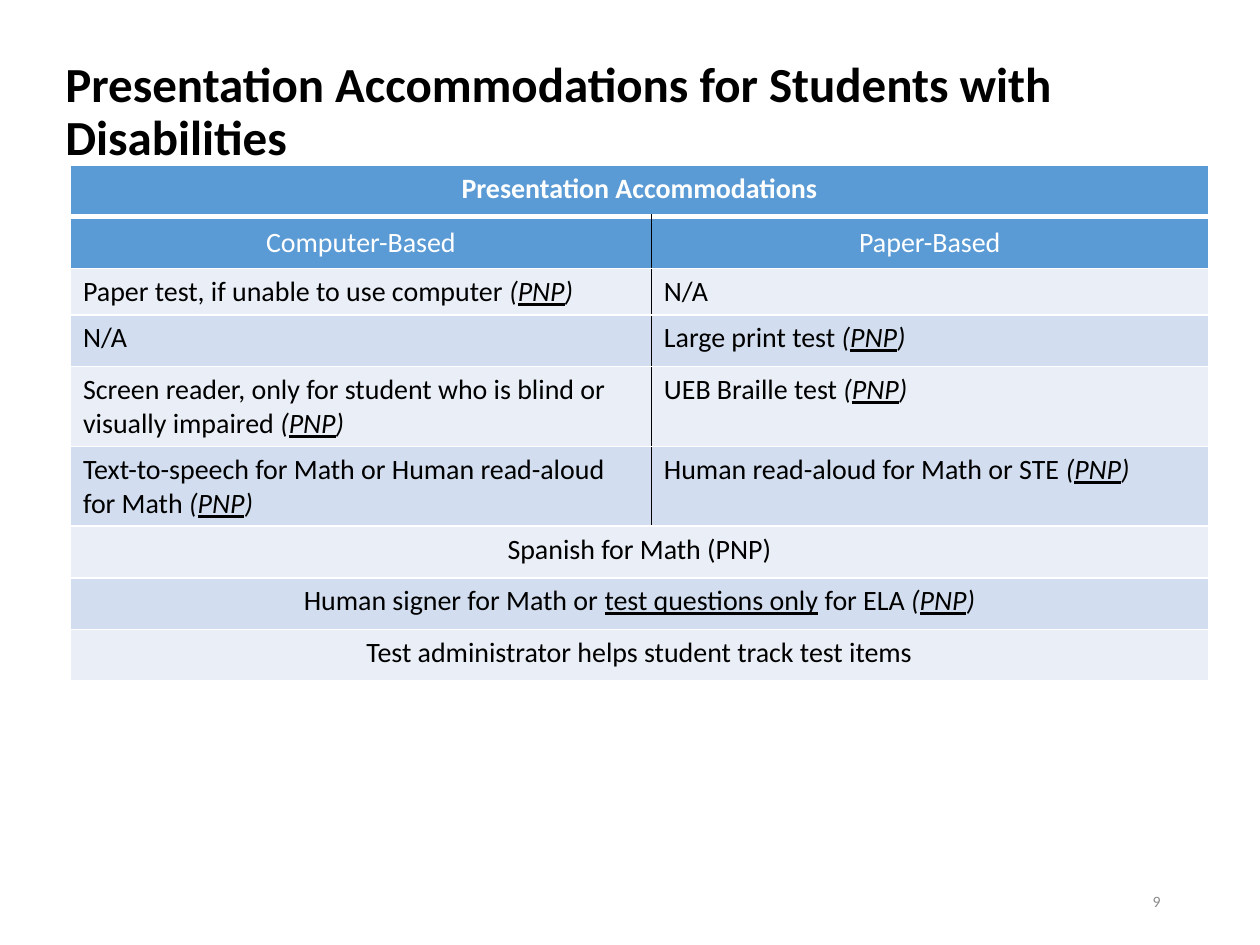
"""Build the slide on presentation accommodations for students with disabilities."""
from lxml import etree
from pptx import Presentation
from pptx.dml.color import RGBColor
from pptx.enum.text import MSO_ANCHOR, PP_ALIGN
from pptx.oxml.ns import qn
from pptx.util import Inches, Pt

LEFT, CENTER, RIGHT = PP_ALIGN.LEFT, PP_ALIGN.CENTER, PP_ALIGN.RIGHT
TOP, MIDDLE = MSO_ANCHOR.TOP, MSO_ANCHOR.MIDDLE

BLACK, WHITE, GRAY = "000000", "FFFFFF", "8C8C8C"
HEADER_FILL, BAND_FILLS = "5B9BD5", ("EAEFF7", "D2DEEF")

PLAIN, ITALIC, UNDERLINE = {}, {"italic": True}, {"underline": True}
PROFILE = [("(", ITALIC), ("PNP", {**ITALIC, **UNDERLINE}), (")", ITALIC)]


def plain(text):
    """Return one run without emphasis."""
    return [(text, PLAIN)]


TITLE = plain("Presentation Accommodations for Students with Disabilities")
PAGE_NUMBER = plain("9")
ROWS = [
    [plain("Presentation Accommodations")],
    [plain("Computer-Based"), plain("Paper-Based")],
    [plain("Paper test, if unable to use computer ") + PROFILE, plain("N/A")],
    [plain("N/A"), plain("Large print test ") + PROFILE],
    [plain("Screen reader, only for student who is blind or visually impaired ") + PROFILE,
     plain("UEB Braille test ") + PROFILE],
    [plain("Text-to-speech for Math or Human read-aloud for Math ") + PROFILE,
     plain("Human read-aloud for Math or STE ") + PROFILE],
    [plain("Spanish for Math (PNP)")],
    [plain("Human signer for Math or ") + [("test questions only", UNDERLINE)]
     + plain(" for ELA ") + PROFILE],
    [plain("Test administrator helps student track test items")],
]
COLUMN_WIDTHS = [4.61, 4.42]
ROW_HEIGHTS = [0.41, 0.41, 0.37, 0.41, 0.53, 0.41, 0.41, 0.41, 0.41]


def color(value):
    """Turn a hex string into a colour."""
    return RGBColor.from_string(value)


def write(frame, runs, size, ink, align=LEFT, bold=False, **paragraph_format):
    """Write one paragraph of styled runs into a text frame."""
    paragraph = frame.paragraphs[0]
    for name, value in {"alignment": align, **paragraph_format}.items():
        setattr(paragraph, name, value)
    for text, style in runs:
        span = paragraph.add_run()
        span.text = text
        span.font.color.rgb = color(ink)
        font_format = {"name": "Calibri", "size": Pt(size), "bold": bold, **style}
        for name, value in font_format.items():
            setattr(span.font, name, value)


def add_text(page, place, runs, *font, **text_format):
    """Add a wrapping text box centred vertically."""
    box = page.shapes.add_textbox(*map(Inches, place))
    box.text_frame.word_wrap = True
    box.text_frame.vertical_anchor = MIDDLE
    write(box.text_frame, runs, *font, **text_format)


def set_borders(cell, borders):
    """Draw the cell borders given as side, colour and width."""
    properties = cell._tc.get_or_add_tcPr()
    for side, ink, width in borders:
        line = etree.SubElement(properties, qn(f"a:ln{side}"), w=str(Pt(width)))
        fill = etree.SubElement(line, qn("a:solidFill"))
        etree.SubElement(fill, qn("a:srgbClr"), val=ink)


def fill_cell(cell, row, column, split):
    """Set the borders and fill of one cell."""
    right = BLACK if split and column == 0 else WHITE
    left = BLACK if split and column == 1 else WHITE
    top_width, bottom_width = (3 if row == 1 else 1), (3 if row == 0 else 1)
    set_borders(cell, [("L", left, 1), ("R", right, 1),
                       ("T", WHITE, top_width), ("B", WHITE, bottom_width)])
    cell.fill.solid()
    cell.fill.fore_color.rgb = color(HEADER_FILL if row < 2 else BAND_FILLS[row % 2])


def add_accommodations(page):
    """Add the table, merging each row that has a single entry."""
    place = (0.56, 1.31, sum(COLUMN_WIDTHS), sum(ROW_HEIGHTS))
    table = page.shapes.add_table(len(ROWS), len(COLUMN_WIDTHS), *map(Inches, place)).table
    for column, width in zip(table.columns, COLUMN_WIDTHS):
        column.width = Inches(width)
    for index, (entries, height) in enumerate(zip(ROWS, ROW_HEIGHTS)):
        table.rows[index].height = Inches(height)
        split = len(entries) > 1
        for column in range(len(COLUMN_WIDTHS)):
            fill_cell(table.cell(index, column), index, column, split)
        if not split:
            table.cell(index, 0).merge(table.cell(index, 1))
        subheading = index == 1
        side, edge = (0.06, 0) if subheading else (0.1, 0.05)
        cell_format = {"margin_left": Inches(side), "margin_right": Inches(side),
                       "margin_top": Inches(edge), "margin_bottom": Inches(edge),
                       "vertical_anchor": MIDDLE if subheading else TOP}
        for column, runs in enumerate(entries):
            cell = table.cell(index, column)
            for name, value in cell_format.items():
                setattr(cell, name, value)
            write(cell.text_frame, runs, 16, WHITE if index < 2 else BLACK,
                  align=CENTER if subheading or not split else LEFT,
                  bold=index == 0)


def main():
    """Build and save the deck."""
    deck = Presentation()
    deck.slide_width, deck.slide_height = Inches(10), Inches(7.5)
    page = deck.slides.add_slide(deck.slide_layouts[6])
    add_text(page, (0.42, 0.49, 9.42, 0.82), TITLE, 28, BLACK, bold=True, line_spacing=0.9)
    add_text(page, (7.06, 6.95, 2.25, 0.4), PAGE_NUMBER, 9, GRAY, align=RIGHT)
    add_accommodations(page)
    deck.save("out.pptx")


if __name__ == "__main__":
    main()
